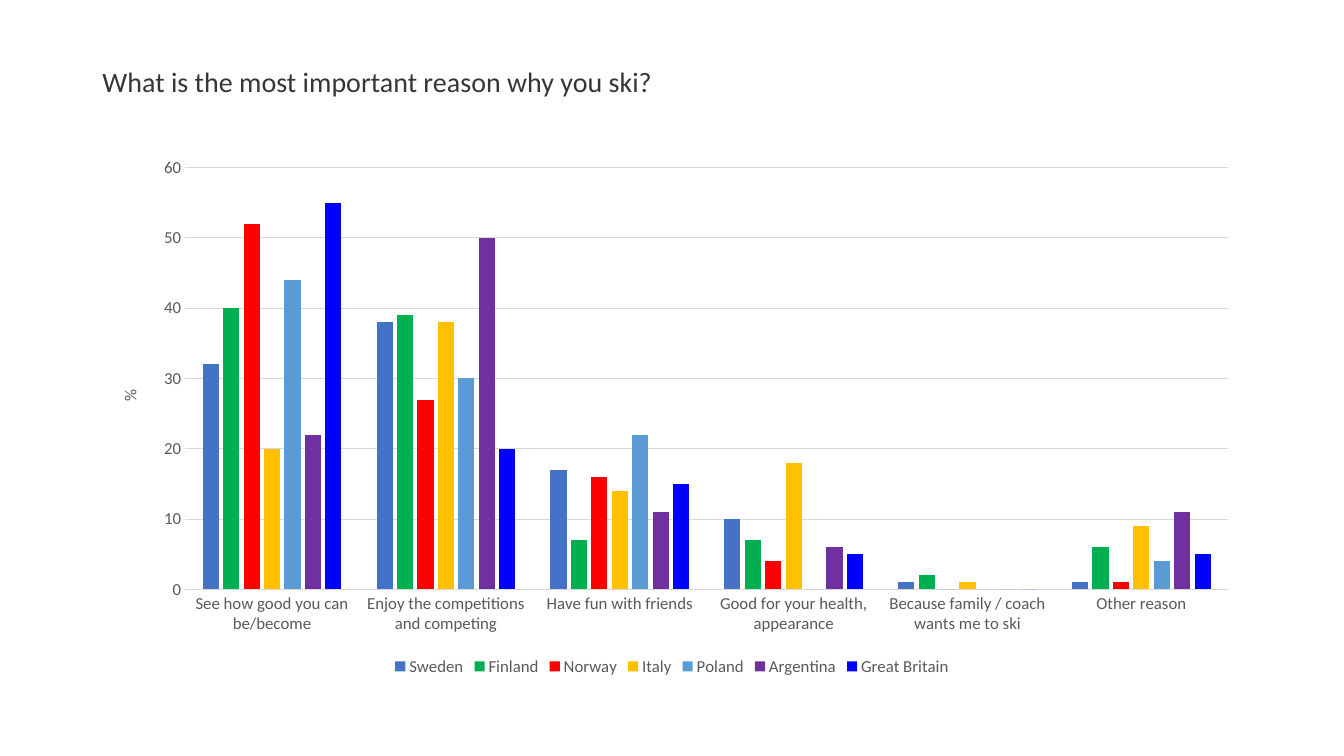
from lxml import etree
from pptx import Presentation
from pptx.chart import data as chart_data
from pptx.dml import color
from pptx.enum import chart as chart_enum, text
from pptx.oxml import ns
from pptx.util import Pt

# Content
TITLE = "What is the most important reason why you ski?"
UNIT = "%"
REASONS = [
    "See how good you can be/become",
    "Enjoy the competitions and competing",
    "Have fun with friends",
    "Good for your health, appearance",
    "Because family / coach wants me to ski",
    "Other reason",
]
ANSWERS = {
    "Sweden": (32, 38, 17, 10, 1, 1),
    "Finland": (40, 39, 7, 7, 2, 6),
    "Norway": (52, 27, 16, 4, 0, 1),
    "Italy": (20, 38, 14, 18, 1, 9),
    "Poland": (44, 30, 22, 0, 0, 4),
    "Argentina": (22, 50, 11, 6, 0, 11),
    "Great Britain": (55, 20, 15, 5, 0, 5),
}
COLORS = {
    "Sweden": "4472C4",
    "Finland": "00B050",
    "Norway": "FF0000",
    "Italy": "FFC000",
    "Poland": "5B9BD5",
    "Argentina": "7030A0",
    "Great Britain": "0000FF",
    "title": "363636",
    "label": "595959",
    "line": "D9D9D9",
}
FONT = "Calibri"
LEFT, WIDTH = 66, 828


def rgb(name):
    return color.RGBColor.from_string(COLORS[name])


def style_font(font, size, name):
    font.name, font.size, font.bold = FONT, Pt(size), False
    font.color.rgb = rgb(name)


def style_line(line):
    line.color.rgb = rgb("line")
    line.width = Pt(0.75)


def set_layout(parent, index, **settings):
    """Give a chart part a manual layout, in fractions of the chart."""
    for old in parent.findall(ns.qn("c:layout")):
        parent.remove(old)
    layout = etree.Element(ns.qn("c:layout"))
    manual = etree.SubElement(layout, ns.qn("c:manualLayout"))
    for tag, value in settings.items():
        etree.SubElement(manual, ns.qn(f"c:{tag}")).set("val", str(value))
    parent.insert(index, layout)


# Slide
deck = Presentation()
deck.slide_width, deck.slide_height = Pt(960), Pt(540)
page = deck.slides.add_slide(deck.slide_layouts[5])

# Title
heading = page.shapes.title
heading.left, heading.top = Pt(LEFT), Pt(28.8)
heading.width, heading.height = Pt(WIDTH), Pt(62)
heading.text_frame.text = TITLE
heading.text_frame.vertical_anchor = text.MSO_ANCHOR.MIDDLE
para = heading.text_frame.paragraphs[0]
para.alignment = text.PP_ALIGN.LEFT
para.line_spacing = 0.9
style_font(para.font, 20, "title")

# Column chart
table = chart_data.CategoryChartData()
table.categories = REASONS
for country, shares in ANSWERS.items():
    table.add_series(country, shares)
chart = page.shapes.add_chart(
    chart_enum.XL_CHART_TYPE.COLUMN_CLUSTERED,
    Pt(LEFT), Pt(104.4), Pt(WIDTH), Pt(381.6), table,
).chart
chart.has_title = False
style_font(chart.font, 12, "label")

plot = chart.plots[0]
plot.gap_width, plot.overlap = 219, -27
plot.vary_by_categories = False
for series in plot.series:
    series.format.fill.solid()
    series.format.fill.fore_color.rgb = rgb(series.name)

# Axes
shares_axis, reasons_axis = chart.value_axis, chart.category_axis
for axis in (shares_axis, reasons_axis):
    axis.major_tick_mark = axis.minor_tick_mark = chart_enum.XL_TICK_MARK.NONE
    style_font(axis.tick_labels.font, 12, "label")
style_line(reasons_axis.format.line)
shares_axis.format.line.fill.background()
shares_axis.minimum_scale, shares_axis.maximum_scale = 0, 60
shares_axis.major_unit = 10
style_line(shares_axis.major_gridlines.format.line)

# Axis title, turned to read upwards
unit_frame = shares_axis.axis_title.text_frame
unit_frame.text = UNIT
style_font(unit_frame.paragraphs[0].font, 12, "label")
unit_title = shares_axis.axis_title._element
turned = unit_title.find(".//" + ns.qn("a:bodyPr"))
turned.set("rot", "-5400000")
turned.set("vert", "horz")
set_layout(unit_title, 1, xMode="edge", yMode="edge", x=0.02, y=0.45)

# Plot area
plot_area = chart._chartSpace.find(".//" + ns.qn("c:plotArea"))
set_layout(plot_area, 0, layoutTarget="inner", xMode="edge", yMode="edge",
           x=0.08, y=0.04, w=0.9, h=0.79)

# Legend
chart.has_legend = True
chart.legend.position = chart_enum.XL_LEGEND_POSITION.BOTTOM
chart.legend.include_in_layout = False
style_font(chart.legend.font, 12, "label")

deck.save("out.pptx")
